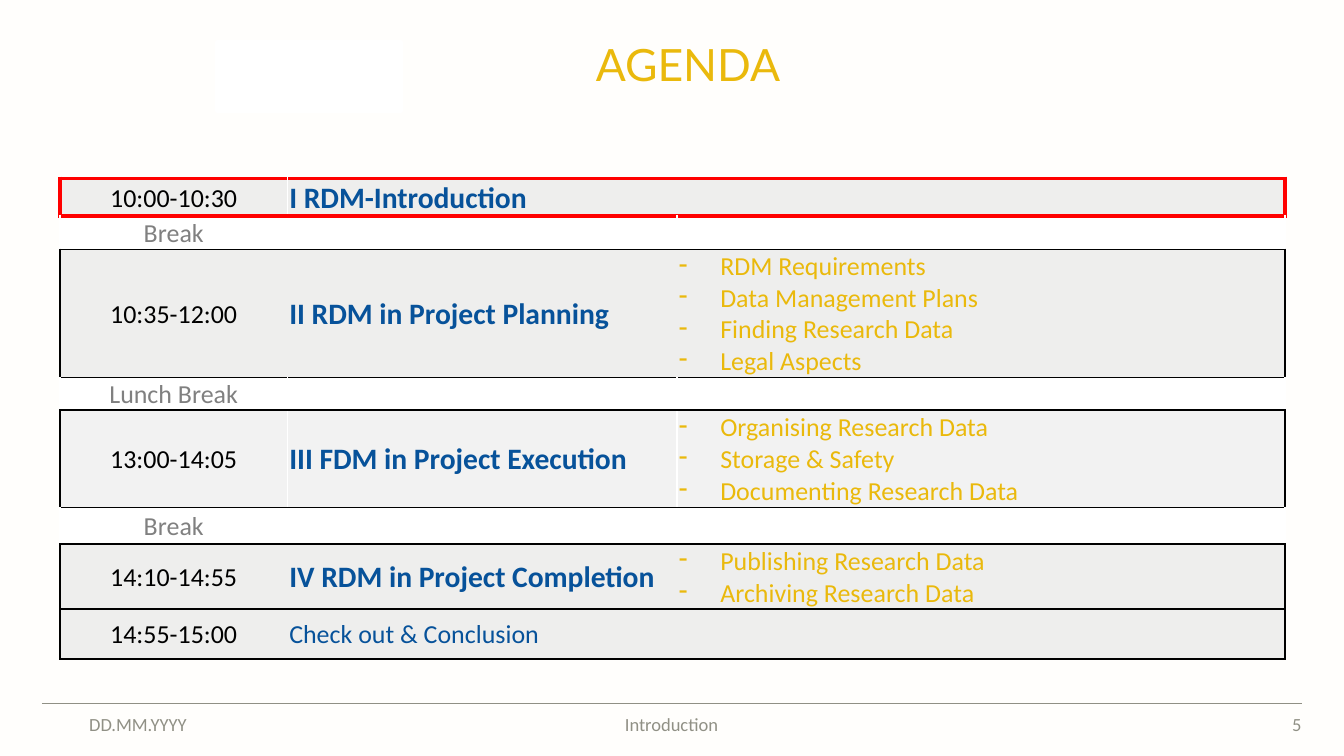
from lxml.etree import SubElement
from pptx import Presentation
from pptx.dml.color import RGBColor
from pptx.enum.shapes import MSO_CONNECTOR, MSO_SHAPE
from pptx.enum.text import MSO_ANCHOR, PP_ALIGN
from pptx.oxml.ns import qn
from pptx.util import Cm, Pt

GOLD = RGBColor(0xEA, 0xB9, 0x0C)
BLUE = RGBColor(0x07, 0x52, 0x9A)
RED = RGBColor(0xFF, 0x00, 0x00)
BLACK = RGBColor(0x00, 0x00, 0x00)
WHITE = RGBColor(0xFF, 0xFF, 0xFF)
CREAM = RGBColor(0xFF, 0xFE, 0xFC)
GREY = RGBColor(0x80, 0x80, 0x80)
FOOTER_GREY = RGBColor(0x90, 0x90, 0x85)
PANEL = RGBColor(0xEE, 0xEE, 0xED)
PANEL_LIGHT = RGBColor(0xF2, 0xF2, 0xF2)

TITLE = "AGENDA"
AGENDA = [
    ("current", 0.72, "10:00-10:30", "I RDM-Introduction", []),
    ("break", 0.63, "Break", "", []),
    ("session", 2.44, "10:35-12:00", "II RDM in Project Planning",
     ["RDM Requirements", "Data Management Plans", "Finding Research Data", "Legal Aspects"]),
    ("break", 0.61, "Lunch Break", "", []),
    ("split", 1.85, "13:00-14:05", "III FDM in Project Execution",
     ["Organising Research Data", "Storage & Safety", "Documenting Research Data"]),
    ("break", 0.7, "Break", "", []),
    ("session", 1.24, "14:10-14:55", "IV RDM in Project Completion",
     ["Publishing Research Data", "Archiving Research Data"]),
    ("closing", 0.95, "14:55-15:00", "Check out & Conclusion", []),
]
FOOTERS = [
    ("DD.MM.YYYY", 1.7, 2.39, PP_ALIGN.LEFT),
    ("Introduction", 5.79, 14.0, PP_ALIGN.CENTER),
    ("5", 23.19, 1.6, PP_ALIGN.RIGHT),
]
COLUMNS = [4.34, 7.42, 11.58]
TABLE_LEFT, TABLE_TOP = 1.14, 3.4
LAST = len(COLUMNS) - 1

TIME = {"size": Pt(14), "name": "Calibri", "bold": False}
TOPIC = {"size": Pt(16), "name": "Calibri", "bold": True}
SMALL = {"size": Pt(10), "name": "Calibri"}
HEADING = {"size": Pt(24), "name": "Lato"}
FILLS = {"break": WHITE, "split": PANEL_LIGHT}


def write(p, text, color, style):
    r = p.add_run()
    r.text = text
    for name, value in style.items():
        setattr(r.font, name, value)
    r.font.color.rgb = color


def add_text(s, box, text, color, style, align=PP_ALIGN.LEFT, anchor=MSO_ANCHOR.TOP):
    tf = s.shapes.add_textbox(*map(Cm, box)).text_frame
    tf.word_wrap = True
    tf.margin_left = tf.margin_right = tf.margin_top = tf.margin_bottom = 0
    tf.vertical_anchor = anchor
    p = tf.paragraphs[0]
    p.alignment = align
    write(p, text, color, style)
    return p


def add_borders(cell, borders):
    tc_pr = cell._tc.get_or_add_tcPr()
    for side in "LRTB":
        color, width = borders.get(side, (None, 1))
        ln = SubElement(tc_pr, qn(f"a:ln{side}"), w=str(Pt(width)))
        if color is None:
            SubElement(ln, qn("a:noFill"))
        else:
            SubElement(SubElement(ln, qn("a:solidFill")), qn("a:srgbClr"), val=str(color))


def borders_for(row, col):
    kind = AGENDA[row][0]
    white = (WHITE, 1)
    edge = {"current": (RED, 2.25), "break": white}.get(kind, (BLACK, 1))
    borders = {"T": edge, "B": edge}
    if kind == "break":
        above, below = AGENDA[row - 1][0], AGENDA[row + 1][0]
        borders["T"] = (RED, 2.25) if above == "current" else (BLACK, 1)
        borders["B"] = (RED, 2.25) if below == "current" else (BLACK, 1)
    divided = kind in ("break", "split") or (kind == "current" and col == 0)
    if col == 0:
        borders["L"] = edge
    elif kind in ("break", "split") or (kind == "current" and col == 1):
        borders["L"] = white
    if col == LAST or (kind == "current" and col == 1):
        borders["R"] = edge
    elif divided:
        borders["R"] = white
    return borders


def fill_cell(cell, row, col):
    kind, _, time, topic, points = AGENDA[row]
    cell.margin_left = cell.margin_right = cell.margin_top = Cm(0.03)
    cell.margin_bottom = 0
    cell.vertical_anchor = MSO_ANCHOR.MIDDLE
    add_borders(cell, borders_for(row, col))
    cell.fill.solid()
    cell.fill.fore_color.rgb = FILLS.get(kind, PANEL)
    tf = cell.text_frame
    p = tf.paragraphs[0]
    if col == 0:
        p.alignment = PP_ALIGN.CENTER
        write(p, time, GREY if kind == "break" else BLACK, TIME)
    elif col == 1 and topic:
        write(p, topic, BLUE, TIME if kind == "closing" else TOPIC)
    elif col == 2 and points:
        for i, point in enumerate(points):
            p = tf.add_paragraph() if i else p
            p_pr = p._p.get_or_add_pPr()
            p_pr.set("marL", str(Cm(0.79)))
            p_pr.set("indent", str(-Cm(0.79)))
            SubElement(p_pr, qn("a:buChar"), char="-")
            write(p, point, GOLD, TIME)
    else:
        SubElement(p._p, qn("a:endParaRPr"), sz="1000")


def add_agenda(s):
    heights = [row[1] for row in AGENDA]
    table = s.shapes.add_table(len(AGENDA), len(COLUMNS), Cm(TABLE_LEFT), Cm(TABLE_TOP),
                               Cm(sum(COLUMNS)), Cm(sum(heights))).table
    table.first_row = table.horz_banding = False
    for column, width in zip(table.columns, COLUMNS):
        column.width = Cm(width)
    for row, height in enumerate(heights):
        table.rows[row].height = Cm(height)
        for col in range(len(COLUMNS)):
            fill_cell(table.cell(row, col), row, col)
    table.cell(0, 1).merge(table.cell(0, LAST))


def main():
    prs = Presentation()
    prs.slide_width, prs.slide_height = Cm(25.6), Cm(14.4)
    s = prs.slides.add_slide(prs.slide_layouts[6])
    s.background.fill.solid()
    s.background.fill.fore_color.rgb = CREAM

    rule = s.shapes.add_connector(MSO_CONNECTOR.STRAIGHT, Cm(0.8), Cm(13.4), Cm(24.8), Cm(13.4))
    rule.line.color.rgb = FOOTER_GREY
    rule.line.width = Pt(1)
    SubElement(rule._element.spPr, qn("a:effectLst"))

    panel = s.shapes.add_shape(MSO_SHAPE.RECTANGLE, Cm(4.14), Cm(0.8), Cm(3.5), Cm(1.32))
    panel.shadow.inherit = False
    panel.fill.solid()
    panel.fill.fore_color.rgb = panel.line.color.rgb = WHITE
    panel.line.width = Pt(2)

    for text, left, width, align in FOOTERS:
        add_text(s, (left, 13.4, width, 0.8), text, FOOTER_GREY, SMALL, align, MSO_ANCHOR.MIDDLE)

    p = add_text(s, (11.15, 0.8, 13.66, 1.8), TITLE, GOLD, HEADING)
    p.line_spacing = Pt(26)
    p._p.get_or_add_pPr().set("marL", str(Cm(0.2)))

    add_agenda(s)
    prs.save("out.pptx")


if __name__ == "__main__":
    main()
